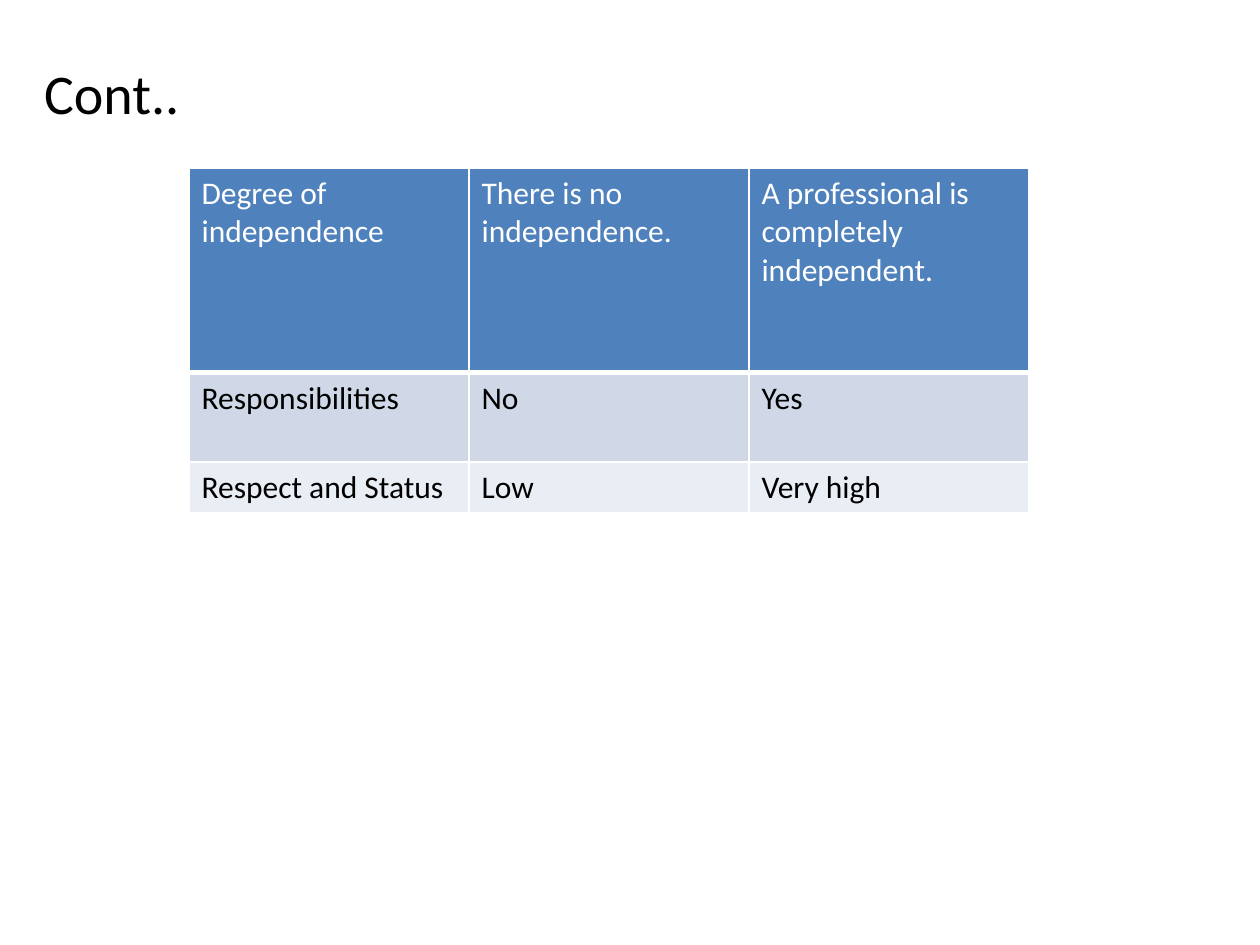
from lxml import etree
from pptx import Presentation
from pptx.dml.color import RGBColor
from pptx.enum.text import MSO_ANCHOR, MSO_AUTO_SIZE, PP_ALIGN
from pptx.oxml.ns import qn
from pptx.util import Pt

TOP = MSO_ANCHOR.TOP
NO_FIT = MSO_AUTO_SIZE.NONE
LEFT = PP_ALIGN.LEFT
TITLE_ONLY = 5
FONT = "Calibri"
COLORS = {
    "header": "4F81BD",
    "band_dark": "D0D8E8",
    "band_light": "E9EDF4",
    "white": "FFFFFF",
    "black": "000000",
}
ROWS = [
    ("Degree of independence", "There is no independence.",
     "A professional is completely independent."),
    ("Responsibilities", "No", "Yes"),
    ("Respect and Status", "Low", "Very high"),
]
ROW_STYLES = [
    (117, "header", "white"),
    (51, "band_dark", "black"),
    (29, "band_light", "black"),
]
COLUMN_WIDTH = 160


def color(name):
    return RGBColor.from_string(COLORS[name])


def format_text(paragraph, size, color_name):
    paragraph.alignment = LEFT
    font = paragraph.font
    font.name = FONT
    font.size = Pt(size)
    font.bold = False
    font.color.rgb = color(color_name)


def add_title(page, text):
    title = page.shapes.title
    title.left, title.top = Pt(18), Pt(30)
    title.width, title.height = Pt(666), Pt(452)
    frame = title.text_frame
    frame.text = text
    frame.word_wrap = True
    frame.auto_size = NO_FIT
    frame.vertical_anchor = TOP
    format_text(frame.paragraphs[0], 32, "black")


def add_border(cell, side, width):
    properties = cell._tc.get_or_add_tcPr()
    line = etree.SubElement(properties, qn(f"a:{side}"), w=str(Pt(width)))
    fill = etree.SubElement(line, qn("a:solidFill"))
    etree.SubElement(fill, qn("a:srgbClr"), val=COLORS["white"])


def format_cell(cell, text, fill_name, text_name, top_width, bottom_width):
    cell.text = text
    cell.vertical_anchor = TOP
    format_text(cell.text_frame.paragraphs[0], 18, text_name)
    widths = {"lnL": 1, "lnR": 1, "lnT": top_width, "lnB": bottom_width}
    for side, width in widths.items():
        add_border(cell, side, width)
    cell.fill.solid()
    cell.fill.fore_color.rgb = color(fill_name)


def add_comparison_table(page):
    column_count = len(ROWS[0])
    total_height = sum(height for height, _, _ in ROW_STYLES)
    table = page.shapes.add_table(
        len(ROWS), column_count, Pt(108), Pt(96),
        Pt(COLUMN_WIDTH * column_count), Pt(total_height)).table
    for column in table.columns:
        column.width = Pt(COLUMN_WIDTH)
    for index, (texts, style) in enumerate(zip(ROWS, ROW_STYLES)):
        height, fill_name, text_name = style
        table.rows[index].height = Pt(height)
        top_width = 3 if index == 1 else 1
        bottom_width = 3 if index == 0 else 1
        for cell, text in zip(table.rows[index].cells, texts):
            format_cell(cell, text, fill_name, text_name, top_width, bottom_width)


def main():
    deck = Presentation()
    deck.slide_width, deck.slide_height = Pt(720), Pt(540)
    page = deck.slides.add_slide(deck.slide_layouts[TITLE_ONLY])
    add_title(page, "Cont..")
    add_comparison_table(page)
    deck.save("out.pptx")


if __name__ == "__main__":
    main()
